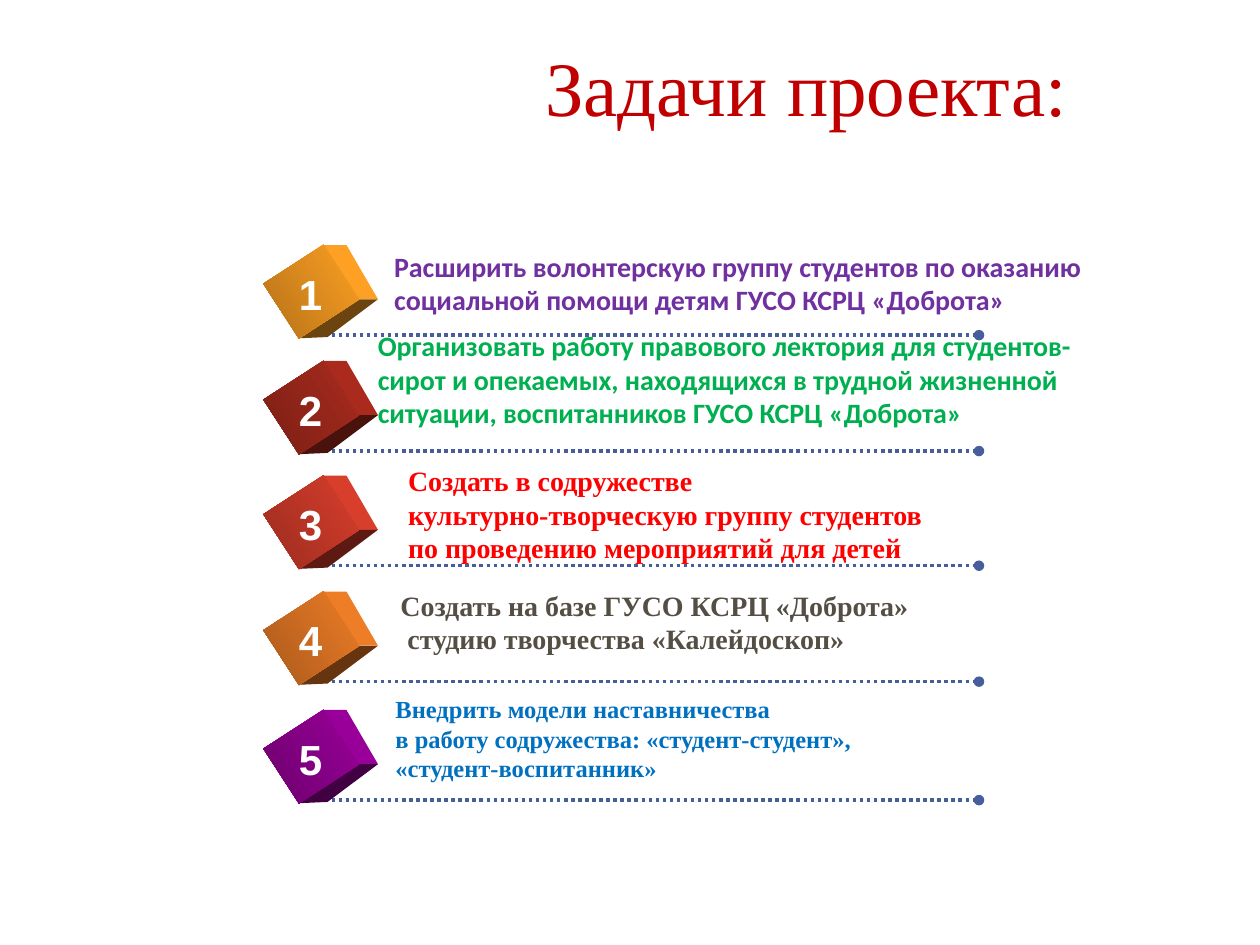
from lxml.etree import SubElement
from pptx import Presentation
from pptx.dml.color import RGBColor
from pptx.enum.dml import MSO_LINE
from pptx.enum.shapes import MSO_CONNECTOR, MSO_SHAPE
from pptx.enum.text import MSO_ANCHOR as Anchor, MSO_AUTO_SIZE as AutoSize, PP_ALIGN as Align
from pptx.oxml.ns import qn
from pptx.util import Inches, Pt

WHITE = RGBColor(0xFF, 0xFF, 0xFF)
CRIMSON = RGBColor(0xC0, 0x00, 0x00)
RULE_BLUE = RGBColor(0x46, 0x5E, 0x9C)
VIOLET = RGBColor(0x70, 0x30, 0xA0)
GREEN = RGBColor(0x00, 0xB0, 0x50)
RED = RGBColor(0xFF, 0x00, 0x00)
GREY = RGBColor(0x55, 0x4E, 0x45)
BLUE = RGBColor(0x00, 0x70, 0xC0)

SERIF, SANS, DIGIT = "Times New Roman", "Calibri", "Arial"
CUBE_CENTER_X, CUBE_WIDTH, CUBE_HEIGHT, CUBE_TURN = 2.47, 0.52, 0.57, 57
RIGHT_FACE = [(0.1, -0.37), (0.28, -0.37), (0.53, 0.06), (0.38, 0.06)]
BOTTOM_FACE = [(-0.1, 0.37), (0.38, 0.06), (0.53, 0.06), (0.13, 0.36)]

STEPS = [
    (2.66, RGBColor(0xFD, 0xA0, 0x23), RGBColor(0xB5, 0x72, 0x19)),
    (3.58, RGBColor(0xAA, 0x2B, 0x1E), RGBColor(0x7A, 0x1F, 0x15)),
    (4.49, RGBColor(0xD8, 0x3E, 0x2C), RGBColor(0x9B, 0x2C, 0x1F)),
    (5.41, RGBColor(0xED, 0x7D, 0x27), RGBColor(0xAA, 0x59, 0x1C)),
    (6.35, RGBColor(0x99, 0x00, 0x99), RGBColor(0x6D, 0x00, 0x6D)),
]
TASKS = [
    ((3.03, 1.93, 6.53, 0.64), SANS, 16, VIOLET, True,
     ["Расширить волонтерскую группу студентов по оказанию "
      "социальной помощи детям ГУСО КСРЦ «Доброта»"]),
    ((2.9, 2.56, 5.93, 0.91), SANS, 16, GREEN, True,
     ["Организовать работу правового лектория для студентов-сирот и опекаемых, "
      "находящихся в трудной жизненной ситуации, воспитанников ГУСО КСРЦ «Доброта»"]),
    ((3.14, 3.63, 4.39, 0.91), SERIF, 16, RED, False,
     ["Создать в содружестве", "культурно-творческую группу студентов",
      "по проведению мероприятий для детей"]),
    ((3.08, 4.62, 4.46, 0.64), SERIF, 16, GREY, False,
     ["Создать на базе ГУСО КСРЦ «Доброта»", " студию творчества «Калейдоскоп»"]),
    ((3.04, 5.46, 3.9, 0.81), SERIF, 14, BLUE, False,
     ["Внедрить модели наставничества", "в работу содружества: «студент-студент»,",
      "«студент-воспитанник»"]),
]


class TaskSlide:
    """Holds the page and draws its titles, rules, cubes and texts."""

    def __init__(self, deck):
        self.page = deck.slides.add_slide(deck.slide_layouts[6])
        self.shapes = self.page.shapes

    def text(self, place, lines, font, size, color, bold=True, wrap=True,
             align=Align.LEFT, anchor=Anchor.TOP, fit=AutoSize.SHAPE_TO_FIT_TEXT):
        box = self.shapes.add_textbox(*map(Inches, place))
        frame = box.text_frame
        frame.word_wrap = wrap
        frame.auto_size = fit
        frame.vertical_anchor = anchor
        for index, line in enumerate(lines):
            para = frame.add_paragraph() if index else frame.paragraphs[0]
            para.alignment = align
            span = para.add_run()
            span.text = line
            span.font.name = font
            span.font.size = Pt(size)
            span.font.bold = bold
            span.font.color.rgb = color

    def rule(self, y):
        rule = self.shapes.add_connector(
            MSO_CONNECTOR.STRAIGHT, Inches(2.52), Inches(y), Inches(7.77), Inches(y))
        rule.line.color.rgb = RULE_BLUE
        rule.line.width = Pt(2)
        rule.line.dash_style = MSO_LINE.ROUND_DOT
        properties = rule._element.spPr
        SubElement(properties.find(qn("a:ln")), qn("a:tailEnd"), type="oval")
        SubElement(properties, qn("a:effectLst"))

    def face(self, center_y, corners, color):
        points = [(Inches(CUBE_CENTER_X + x), Inches(center_y + y)) for x, y in corners]
        builder = self.shapes.build_freeform(*points[0])
        builder.add_line_segments(points[1:], close=True)
        face = builder.convert_to_shape()
        face.shadow.inherit = False
        face.fill.solid()
        face.fill.fore_color.rgb = color
        face.line.fill.background()

    def cube(self, center_y, bright, dark):
        self.face(center_y, RIGHT_FACE, bright)
        self.face(center_y, BOTTOM_FACE, RGBColor(*(int(part * 0.6) for part in dark)))
        front = self.shapes.add_shape(
            MSO_SHAPE.RECTANGLE,
            Inches(CUBE_CENTER_X - CUBE_WIDTH / 2), Inches(center_y - CUBE_HEIGHT / 2),
            Inches(CUBE_WIDTH), Inches(CUBE_HEIGHT))
        front.rotation = CUBE_TURN
        front.shadow.inherit = False
        front.line.fill.background()
        front.fill.gradient()
        front.fill.gradient_angle = 270
        for stop, color in zip(front.fill.gradient_stops, (bright, dark)):
            stop.color.rgb = color

    def step(self, number, y, bright, dark):
        self.rule(y)
        self.cube(y - 0.345, bright, dark)
        self.text((2.27, y - 0.58, 0.39, 0.5), [str(number)], DIGIT, 24, WHITE,
                  wrap=False, align=Align.CENTER)


def main():
    deck = Presentation()
    deck.slide_width, deck.slide_height = Inches(10), Inches(7.5)
    slide = TaskSlide(deck)
    slide.text((2.8, 0.05, 7.2, 1.26), ["Задачи проекта:"], SERIF, 44, CRIMSON, bold=False,
               align=Align.CENTER, anchor=Anchor.MIDDLE, fit=AutoSize.NONE)
    for number, (y, bright, dark) in enumerate(STEPS, 1):
        slide.step(number, y, bright, dark)
    for place, font, size, color, wrap, lines in TASKS:
        slide.text(place, lines, font, size, color, wrap=wrap)
    deck.save("out.pptx")


if __name__ == "__main__":
    main()
